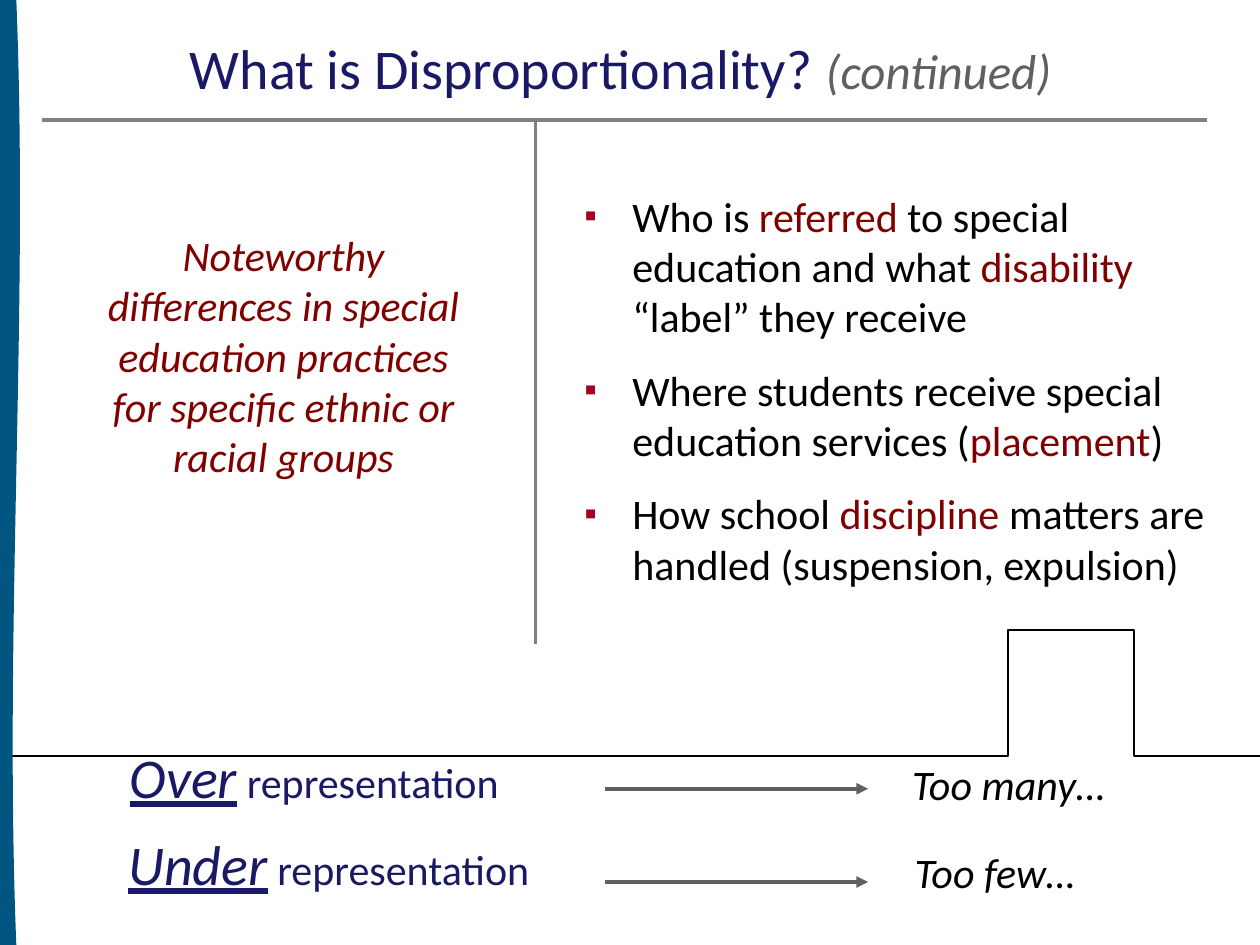
"""Build the slide that explains disproportionality in special education."""
from dataclasses import dataclass, field
from typing import Any

from lxml import etree
from pptx import Presentation
from pptx.dml.color import RGBColor
from pptx.enum.shapes import MSO_CONNECTOR, MSO_SHAPE
from pptx.enum.text import MSO_ANCHOR, MSO_AUTO_SIZE, PP_ALIGN
from pptx.oxml.ns import qn
from pptx.util import Inches, Pt

STRAIGHT = MSO_CONNECTOR.STRAIGHT
WAVE = MSO_SHAPE.WAVE
TOP, MIDDLE = MSO_ANCHOR.TOP, MSO_ANCHOR.MIDDLE
LEFT, CENTER = PP_ALIGN.LEFT, PP_ALIGN.CENTER
NO_FIT = MSO_AUTO_SIZE.NONE

FONT = "Calibri"
NAVY, MAROON, BLACK = "191966", "800000", "000000"
GRAY, DARK_GRAY = "808080", "606060"
BULLET_RED, BAND_BLUE = "A50021", "005680"
BULLET_INDENT = 0.38


@dataclass
class Run:
    text: str
    color: str = BLACK
    size: float = 24
    format: dict[str, Any] = field(default_factory=dict)


@dataclass
class TextBlock:
    box: tuple[float, float, float, float]
    paragraphs: list[list[Run]]
    align: Any = LEFT
    anchor: Any = TOP
    space_before: float = 0
    bullet: str = ""
    wrap: bool = True


@dataclass
class Line:
    start: tuple[float, float]
    end: tuple[float, float]
    color: str
    width: float
    arrow: bool = False


ITALIC = {"italic": True}
EMPHASIS = {"italic": True, "underline": True}

TITLE = TextBlock(
    (0.27, 0.12, 9.31, 0.82),
    [[Run("What is Disproportionality? ", NAVY, 32),
      Run("(continued)", DARK_GRAY, 28, ITALIC)]],
    align=CENTER, anchor=MIDDLE)

DEFINITION = TextBlock(
    (0.65, 1.77, 3.2, 2.12),
    [[Run("Noteworthy differences in special education practices "
          "for specific ethnic or racial groups", MAROON, 24, ITALIC)]],
    align=CENTER, space_before=7)

EXAMPLES = TextBlock(
    (4.54, 1.46, 5.25, 2.03),
    [[Run("Who is "), Run("referred", MAROON),
      Run(" to special education and what "), Run("disability", MAROON),
      Run(" “label” they receive")],
     [Run("Where students receive special education services ("),
      Run("placement", MAROON), Run(")")],
     [Run("How school "), Run("discipline", MAROON),
      Run(" matters are handled (suspension, expulsion)")]],
    space_before=13, bullet="▪")


def representation(prefix: str, box: tuple[float, float, float, float]) -> TextBlock:
    """Describe one kind of representation with its stressed prefix."""
    runs = [Run(prefix, NAVY, 32, EMPHASIS), Run(" representation", NAVY)]
    return TextBlock(box, [runs], anchor=MIDDLE)


def outcome(text: str, box: tuple[float, float, float, float], wrap: bool) -> TextBlock:
    """Describe the plain meaning of one kind of representation."""
    return TextBlock(box, [[Run(text, format=ITALIC)]], space_before=7, wrap=wrap)


TEXT_BLOCKS = [
    representation("Over", (0.93, 5.62, 3.75, 1.08)),
    representation("Under", (0.92, 6.31, 4.2, 1.08)),
    outcome("Too many…", (7.14, 5.97, 2.08, 0.83), True),
    outcome("Too few…", (7.16, 6.67, 1.49, 0.5), False),
    DEFINITION,
    EXAMPLES,
]

LINES = [
    Line((0.33, 0.95), (9.58, 0.95), GRAY, 2.25),
    Line((4.25, 0.95), (4.25, 5.11), GRAY, 1.5),
    *[Line((4.8, y), (6.89, y), DARK_GRAY, 2.25, True) for y in (6.26, 7)],
]

DIVIDER_POINTS = [
    (0.15, 5.54), (0.44, 5.54), (0.73, 5.52), (1.06, 5.52), (1.37, 5.51),
    (1.49, 5.5), (1.58, 5.5), (1.74, 5.51), (1.85, 5.52), (2.08, 5.54),
    (3.12, 5.54), (3.34, 5.53), (3.69, 5.53), (3.94, 5.54), (4.15, 5.55),
    (4.53, 5.54), (4.88, 5.52), (5.16, 5.52), (5.29, 5.53), (5.7, 5.53),
    (5.79, 5.52), (6.54, 5.53), (7.23, 5.52), (7.67, 5.5), (8.03, 5.49),
    (8.13, 5.48), (8.39, 5.45), (8.53, 5.44), (8.71, 5.42), (8.8, 5.41),
    (8.9, 5.43), (8.97, 5.45), (9.08, 5.46), (9.2, 5.49), (9.3, 5.51),
    (9.36, 5.52), (9.39, 5.54), (9.48, 5.55), (9.53, 5.55), (9.61, 5.54),
    (9.7, 5.52),
]


def rgb(color: str) -> RGBColor:
    """Turn a hex string into a colour."""
    return RGBColor.from_string(color)


def add_bullet(paragraph: Any, character: str) -> None:
    """Give a paragraph a hanging coloured bullet."""
    properties = paragraph._p.get_or_add_pPr()
    properties.set("marL", str(Inches(BULLET_INDENT)))
    properties.set("indent", str(-Inches(BULLET_INDENT)))
    color = etree.SubElement(properties, qn("a:buClr"))
    etree.SubElement(color, qn("a:srgbClr"), val=BULLET_RED)
    etree.SubElement(properties, qn("a:buSzPct"), val="85000")
    etree.SubElement(properties, qn("a:buFont"), typeface="Arial")
    etree.SubElement(properties, qn("a:buChar"), char=character)


def write_text(shape: Any, block: TextBlock) -> None:
    """Place a shape and fill it with the formatted text of a block."""
    shape.left, shape.top, shape.width, shape.height = map(Inches, block.box)
    frame = shape.text_frame
    frame.auto_size = NO_FIT
    frame.word_wrap = block.wrap
    frame.vertical_anchor = block.anchor
    for index, runs in enumerate(block.paragraphs):
        paragraph = frame.add_paragraph() if index else frame.paragraphs[0]
        paragraph.alignment = block.align
        paragraph.space_before = Pt(block.space_before)
        if block.bullet:
            add_bullet(paragraph, block.bullet)
        for item in runs:
            run = paragraph.add_run()
            run.text = item.text
            run.font.color.rgb = rgb(item.color)
            values = {"name": FONT, "size": Pt(item.size), **item.format}
            for name, value in values.items():
                setattr(run.font, name, value)


def draw_line(slide: Any, line: Line) -> None:
    """Draw a straight line, with an arrowhead where asked for."""
    connector = slide.shapes.add_connector(
        STRAIGHT, *map(Inches, line.start + line.end))
    connector.line.color.rgb = rgb(line.color)
    connector.line.width = Pt(line.width)
    if line.arrow:
        etree.SubElement(connector.line._get_or_add_ln(), qn("a:tailEnd"), type="triangle")
    etree.SubElement(connector._element.spPr, qn("a:effectLst"))


def draw_divider(slide: Any) -> None:
    """Draw the uneven line above the two kinds of representation."""
    builder = slide.shapes.build_freeform(*DIVIDER_POINTS[0], scale=Inches(1))
    builder.add_line_segments(DIVIDER_POINTS[1:], close=False)
    divider = builder.convert_to_shape()
    divider.shadow.inherit = False
    divider.fill.background()
    divider.line.color.rgb = rgb(BLACK)
    divider.line.width = Pt(1)


def draw_side_band(slide: Any) -> None:
    """Draw the wavy band along the left edge."""
    band = slide.shapes.add_shape(WAVE, *map(Inches, (-3.71, 3.63, 7.5, 0.24)))
    band.rotation = 270
    band.shadow.inherit = False
    band.fill.solid()
    band.fill.fore_color.rgb = rgb(BAND_BLUE)
    band.line.fill.background()


def main() -> None:
    """Build and save the presentation."""
    presentation = Presentation()
    presentation.slide_width, presentation.slide_height = Inches(10), Inches(7.5)
    slide = presentation.slides.add_slide(presentation.slide_layouts.get_by_name("Title Only"))
    write_text(slide.shapes.title, TITLE)
    for block in TEXT_BLOCKS:
        write_text(slide.shapes.add_textbox(*map(Inches, block.box)), block)
    for line in LINES:
        draw_line(slide, line)
    draw_divider(slide)
    draw_side_band(slide)
    presentation.save("out.pptx")


if __name__ == "__main__":
    main()
